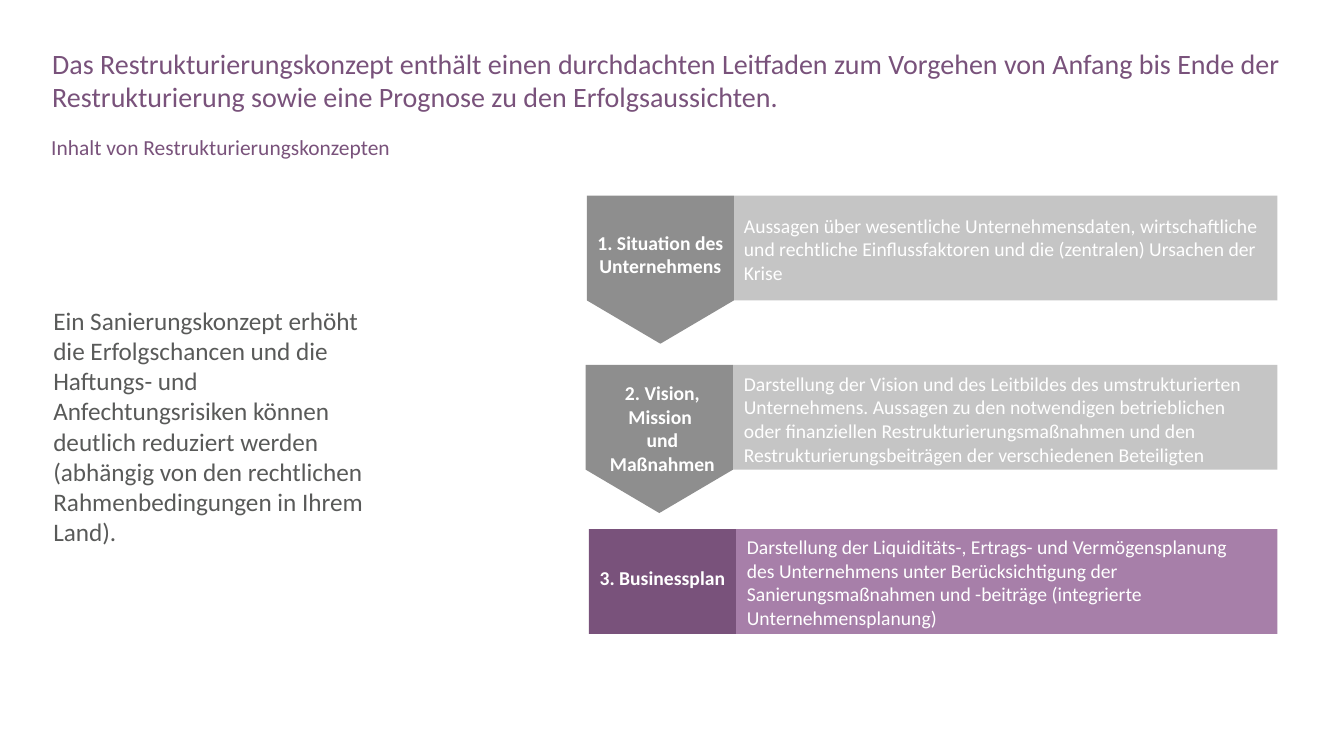
from copy import deepcopy

from lxml.etree import SubElement
from pptx import Presentation
from pptx.dml.color import RGBColor
from pptx.enum.shapes import MSO_SHAPE
from pptx.enum.text import MSO_ANCHOR, PP_ALIGN
from pptx.oxml.ns import qn
from pptx.util import Inches, Pt

COLORS = {
    "plum": "79527B",
    "light plum": "A77FA9",
    "gray": "8E8E8E",
    "light gray": "C5C5C5",
    "body": "595A59",
    "white": "FFFFFF",
}


def add_numbering(paragraph, color):
    properties = paragraph._p.get_or_add_pPr()
    properties.set("marL", "0")
    properties.set("indent", str(-Inches(0.1)))
    bullet_color = SubElement(properties, qn("a:buClr"))
    SubElement(bullet_color, qn("a:srgbClr"), val=COLORS[color])
    SubElement(properties, qn("a:buFont"), typeface="+mj-lt")
    SubElement(properties, qn("a:buAutoNum"), type="arabicPeriod")


def write_text(frame, text, size=14, color="white", font="Calibri", bold=False,
               align=PP_ALIGN.LEFT, anchor=MSO_ANCHOR.TOP, spacing=None,
               numbered=False):
    frame.word_wrap = True
    frame.vertical_anchor = anchor
    paragraph = frame.paragraphs[0]
    paragraph.text = text
    paragraph.alignment = align
    if spacing:
        paragraph.line_spacing = spacing
    if numbered:
        add_numbering(paragraph, color)
    for run in paragraph.runs:
        run.font.name = font
        run.font.size = Pt(size)
        run.font.bold = bold
        run.font.color.rgb = RGBColor.from_string(COLORS[color])
    # Line breaks take the format of the runs
    for line_break in paragraph._p.findall(qn("a:br")):
        line_break.insert(0, deepcopy(paragraph.runs[0]._r.rPr))


class SlideBuilder:
    def __init__(self, slide, font="Calibri"):
        self.slide = slide
        self.font = font

    def paint(self, shape, color):
        shape.shadow.inherit = False
        shape.fill.solid()
        shape.fill.fore_color.rgb = RGBColor.from_string(COLORS[color])
        shape.line.fill.background()

    def text(self, left, top, width, height, text, **style):
        box = self.slide.shapes.add_textbox(
            Inches(left), Inches(top), Inches(width), Inches(height))
        write_text(box.text_frame, text, font=self.font, **style)

    def rectangle(self, left, top, width, height, color):
        shape = self.slide.shapes.add_shape(
            MSO_SHAPE.RECTANGLE,
            Inches(left), Inches(top), Inches(width), Inches(height))
        self.paint(shape, color)

    def down_pointer(self, left, top, width, height, tip, color):
        right, shoulder = left + width, top + height
        points = [(right, top), (right, shoulder),
                  (left + width / 2, shoulder + tip), (left, shoulder)]
        builder = self.slide.shapes.build_freeform(
            Inches(left), Inches(top), scale=1.0)
        builder.add_line_segments(
            [(Inches(x), Inches(y)) for x, y in points], close=True)
        self.paint(builder.convert_to_shape(), color)


def main():
    presentation = Presentation()
    presentation.slide_width = Inches(13.33)
    presentation.slide_height = Inches(7.5)
    slide = presentation.slides.add_slide(presentation.slide_layouts[6])
    builder = SlideBuilder(slide)

    # Title, subtitle and statement
    builder.text(0.42, 0.41, 12.54, 0.64,
                 "Das Restrukturierungskonzept enthält einen durchdachten "
                 "Leitfaden zum Vorgehen von Anfang bis Ende der "
                 "Restrukturierung sowie eine Prognose zu den "
                 "Erfolgsaussichten.", size=20, color="plum")
    builder.text(0.41, 1.35, 12.56, 0.28,
                 "Inhalt von Restrukturierungskonzepten",
                 size=15.3, color="plum", spacing=0.7)
    builder.text(0.43, 1.79, 3.49, 4.87,
                 "Ein Sanierungskonzept erhöht die Erfolgschancen und die "
                 "Haftungs- und Anfechtungsrisiken können deutlich reduziert "
                 "werden (abhängig von den rechtlichen Rahmenbedingungen in "
                 "Ihrem Land).", size=18, color="body",
                 anchor=MSO_ANCHOR.MIDDLE)

    # Steps: left, top, tip, colours, label (top, height), text box, texts
    steps = [
        (5.82, 1.94, 0.43, "gray", "light gray",
         (5.76, 2.24, 1.58, 0.57), (7.28, 2.07, 5.39, 0.81),
         " Situation des Unternehmens",
         "Aussagen über wesentliche Unternehmensdaten, wirtschaftliche und "
         "rechtliche Einflussfaktoren und die (zentralen) Ursachen der Krise"),
        (5.81, 3.62, 0.43, "gray", "light gray",
         (5.79, 3.73, 1.56, 1.28), (7.28, 3.64, 5.39, 1.04),
         "2. Vision, Mission \vund Maßnahmen",
         "Darstellung der Vision und des Leitbildes des umstrukturierten "
         "Unternehmens. Aussagen zu den notwendigen betrieblichen oder "
         "finanziellen Restrukturierungsmaßnahmen und den "
         "Restrukturierungsbeiträgen der verschiedenen Beteiligten"),
        (5.84, 5.25, 0, "plum", "light plum",
         (5.78, 5.57, 1.58, 0.34), (7.31, 5.26, 5.16, 1.04),
         "3. Businessplan",
         "Darstellung der Liquiditäts-, Ertrags- und Vermögensplanung des "
         "Unternehmens unter Berücksichtigung der Sanierungsmaßnahmen und "
         "-beiträge (integrierte Unternehmensplanung)"),
    ]
    label_width, bar_height, bar_right = 1.46, 1.04, 12.67
    for (left, top, tip, label_color, bar_color, label_area, text_area,
         label, description) in steps:
        bar_left = left + label_width
        builder.rectangle(bar_left, top, bar_right - bar_left, bar_height,
                          bar_color)
        if tip:
            builder.down_pointer(left, top, label_width, bar_height, tip,
                                 label_color)
        else:
            builder.rectangle(left, top, label_width, bar_height, label_color)
        builder.text(*label_area, label, bold=True, align=PP_ALIGN.CENTER,
                     numbered=label.startswith(" "))
        builder.text(*text_area, description)

    presentation.save("out.pptx")


if __name__ == "__main__":
    main()
